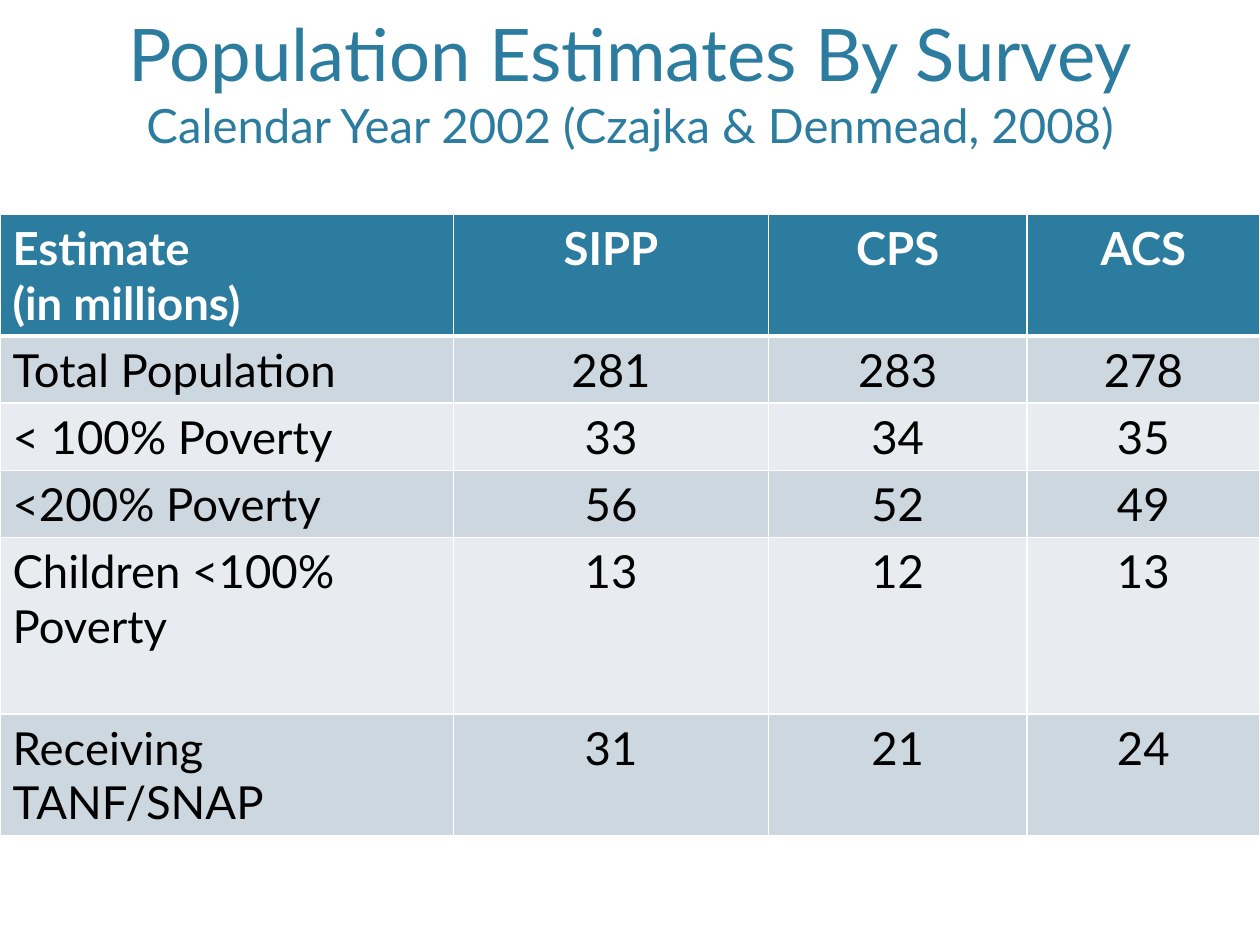
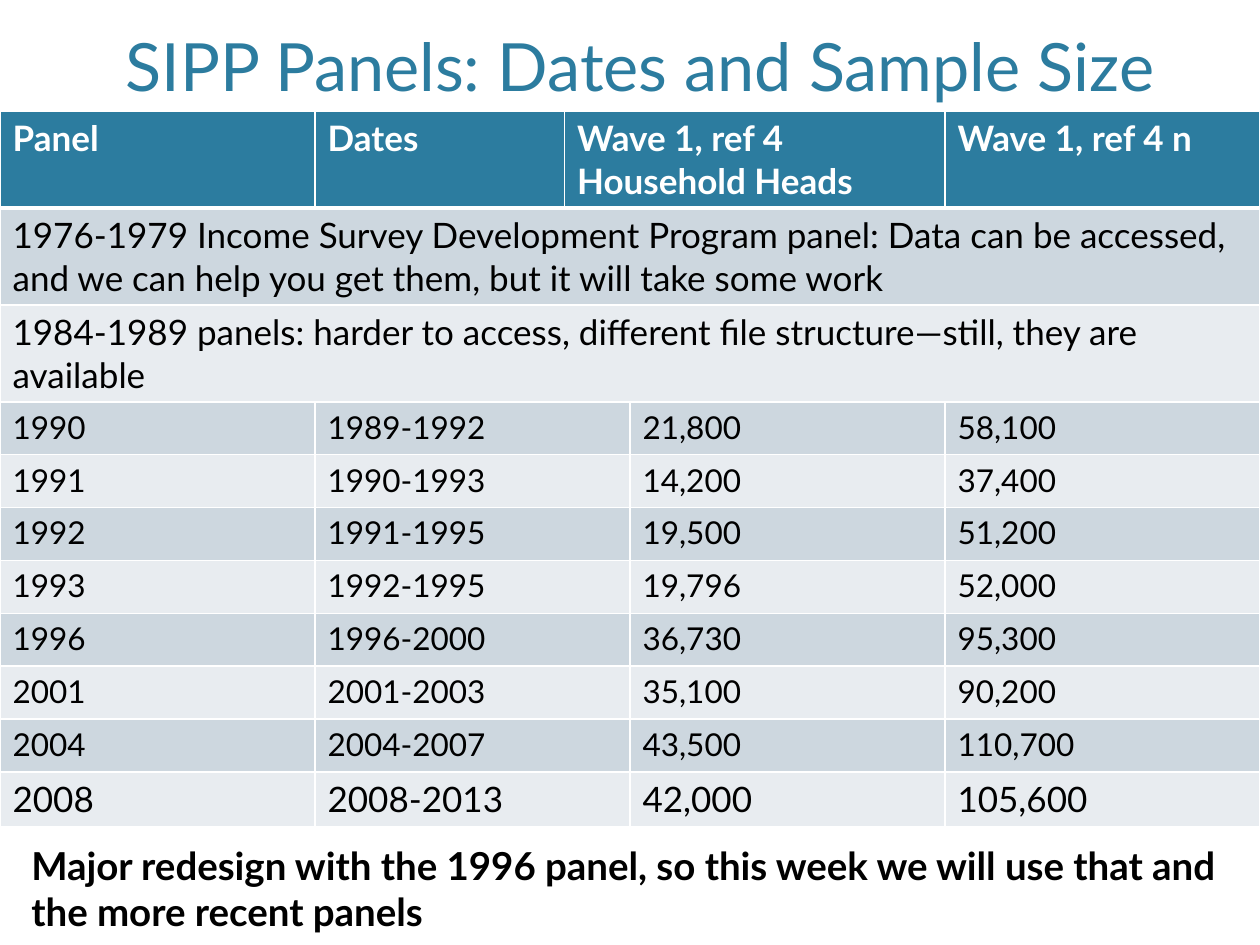
from lxml import etree
from pptx import Presentation
from pptx.dml.color import RGBColor
from pptx.enum import text
from pptx.oxml import ns
from pptx.util import Inches, Pt

COLORS = {"accent": "2C7C9F", "band_dark": "CDD7DF", "band_light": "E8ECF0",
          "white": "FFFFFF", "black": "000000"}
FONT = "Lato"
LEFT, CENTER = text.PP_ALIGN.LEFT, text.PP_ALIGN.CENTER

SURVEY_ROWS = [
    ["Estimate\n(in millions)", "SIPP", "CPS", "ACS"],
    ["Total Population", "281", "283", "278"],
    ["< 100% Poverty", "33", "34", "35"],
    ["<200% Poverty", "56", "52", "49"],
    ["Children <100% Poverty", "13", "12", "13"],
    ["Receiving TANF/SNAP", "31", "21", "24"],
]

# None continues the cell to its left.
PANEL_ROWS = [
    ["Panel", "Dates", "Wave 1, ref 4 Household Heads", None, "Wave 1, ref 4 n"],
    ["1976-1979 Income Survey Development Program panel: Data can be accessed, "
     "and we can help you get them, but it will take some work"] + [None] * 4,
    ["1984-1989 panels: harder to access, different file structure—still, "
     "they are available"] + [None] * 4,
    ["1990", "1989-1992", None, "21,800", "58,100"],
    ["1991", "1990-1993", None, "14,200", "37,400"],
    ["1992", "1991-1995", None, "19,500", "51,200"],
    ["1993", "1992-1995", None, "19,796", "52,000"],
    ["1996", "1996-2000", None, "36,730", "95,300"],
    ["2001", "2001-2003", None, "35,100", "90,200"],
    ["2004", "2004-2007", None, "43,500", "110,700"],
    ["2008", "2008-2013", None, "42,000", "105,600"],
]


def rgb(name):
    return RGBColor.from_string(COLORS[name])


def add_run(p, words, size, color, bold=False):
    r = p.add_run()
    r.text = words
    for name, value in {"name": FONT, "size": Pt(size), "bold": bold}.items():
        setattr(r.font, name, value)
    r.font.color.rgb = rgb(color)


def add_text(slide, box, lines, color, align=LEFT, bold=False,
             anchor=text.MSO_ANCHOR.TOP):
    """Write (words, size) lines as one paragraph with line breaks."""
    tf = slide.shapes.add_textbox(*map(Inches, box)).text_frame
    for name, value in {"word_wrap": True, "vertical_anchor": anchor}.items():
        setattr(tf, name, value)
    p = tf.paragraphs[0]
    p.alignment = align
    for i, (words, size) in enumerate(lines):
        if i:
            p.add_line_break()
        add_run(p, words, size, color, bold)


def add_title(slide, box, *lines):
    add_text(slide, box, lines, "accent", CENTER, anchor=text.MSO_ANCHOR.BOTTOM)


def set_borders(cell, **widths):
    tc_pr = cell._tc.get_or_add_tcPr()
    for i, side in enumerate("LRTB"):
        ln = etree.Element(ns.qn(f"a:ln{side}"), w=str(Pt(widths.get(side, 1))))
        fill = etree.SubElement(ln, ns.qn("a:solidFill"))
        etree.SubElement(fill, ns.qn("a:srgbClr"), val=COLORS["white"])
        tc_pr.insert(i, ln)


def style_cell(cell, row):
    cell.fill.solid()
    bands = "band_light", "band_dark"
    cell.fill.fore_color.rgb = rgb(bands[row % 2] if row else "accent")
    heavy = {0: {"B": 3}, 1: {"T": 3}}
    set_borders(cell, **heavy.get(row, {}))


def fill_cell(cell, words, size, header, align):
    tf = cell.text_frame
    for i, line in enumerate(words.split("\n")):
        p = tf.add_paragraph() if i else tf.paragraphs[0]
        p.alignment = align
        add_run(p, line, size, "white" if header else "black", header)


def add_banded_table(slide, top, widths, heights, rows, sizes, value_align=LEFT):
    """Place a table with a dark header; sizes holds one text size per row."""
    box = 0, top, sum(widths), sum(heights)
    table = slide.shapes.add_table(len(rows), len(widths), *map(Inches, box)).table
    for column, width in zip(table.columns, widths):
        column.width = Inches(width)
    for i, (row, height, size) in enumerate(zip(rows, heights, sizes)):
        table.rows[i].height = Inches(height)
        for j, words in enumerate(row):
            cell = table.cell(i, j)
            style_cell(cell, i)
            if words is None:
                continue
            end = j
            while end + 1 < len(row) and row[end + 1] is None:
                end += 1
            if end > j:
                cell.merge(table.cell(i, end))
            fill_cell(cell, words, size, i == 0, value_align if j else LEFT)


def build_survey_slide(slide):
    add_title(slide, (0.6, 0.12, 8.8, 1.14),
              ("Population Estimates By Survey", 41.4),
              ("Calendar Year 2002 (Czajka & Denmead, 2008)", 27))
    add_banded_table(slide, 1.7, [3.6, 2.5, 2.05, 1.85],
                     [0.96, 0.53, 0.53, 0.53, 1.4, 0.97],
                     SURVEY_ROWS, [26] * len(SURVEY_ROWS), CENTER)


def build_panel_slide(slide):
    add_title(slide, (0.33, 0.12, 9.5, 0.76),
              ("SIPP Panels: Dates and Sample Size", 38))
    add_banded_table(slide, 0.88, [2.5, 1.98, 0.52, 2.5, 2.5],
                     [0.77] * 3 + [0.42] * 7 + [0.43],
                     PANEL_ROWS, [20] * 3 + [18] * 7 + [20])
    add_text(slide, (0.15, 6.63, 9.85, 0.84),
             [("Major redesign with the 1996 panel, so this week we will use "
               "that and the more recent panels", 22)], "black", bold=True)


def main():
    prs = Presentation()
    prs.slide_width, prs.slide_height = Inches(10), Inches(7.5)
    for build in (build_survey_slide, build_panel_slide):
        build(prs.slides.add_slide(prs.slide_layouts[6]))
    prs.save("out.pptx")


if __name__ == "__main__":
    main()
